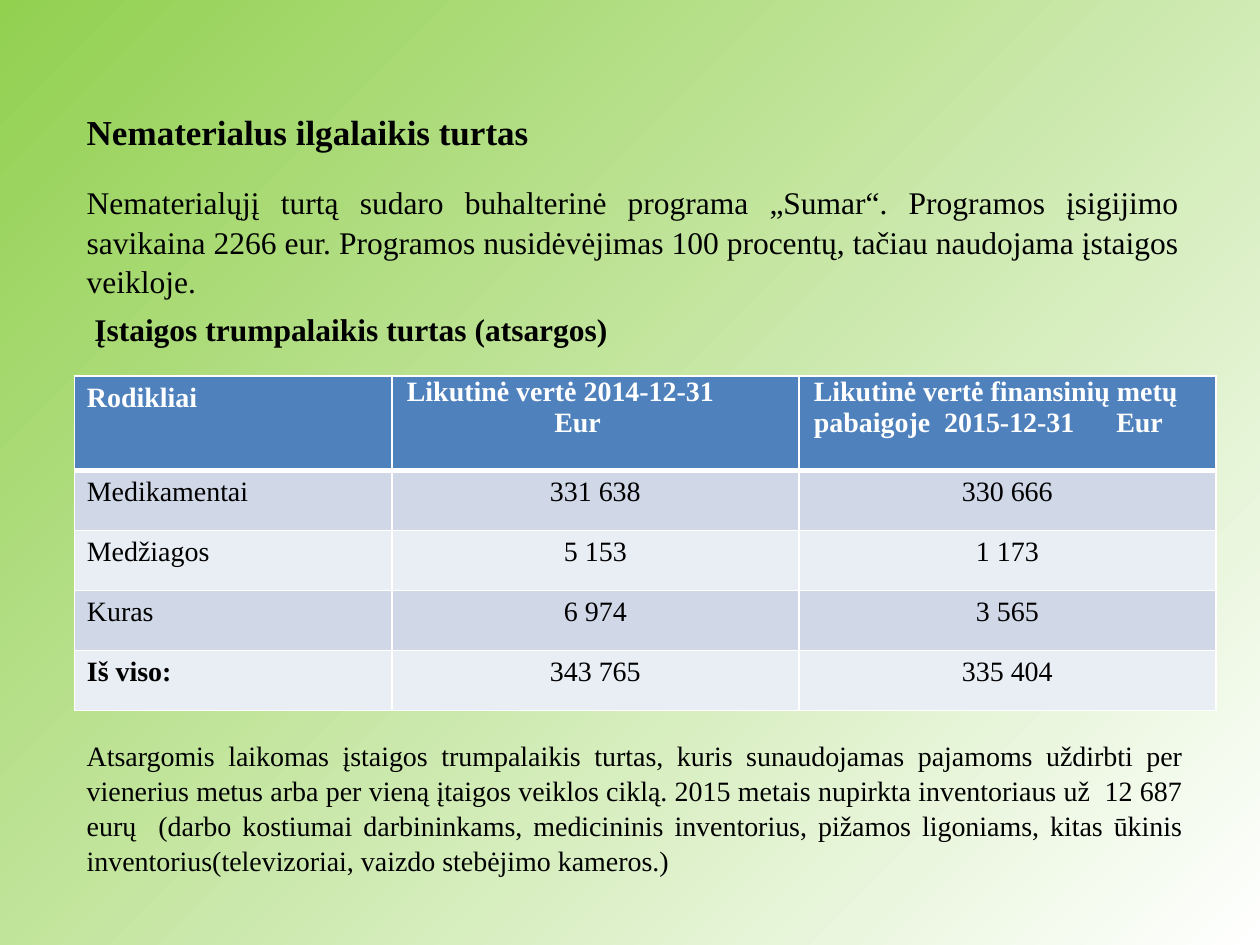
from lxml.etree import SubElement
from pptx import Presentation
from pptx.dml.color import RGBColor
from pptx.enum.text import PP_ALIGN
from pptx.oxml.ns import qn
from pptx.util import Inches, Pt

BLACK = RGBColor(0x00, 0x00, 0x00)
WHITE = RGBColor(0xFF, 0xFF, 0xFF)
GREEN = RGBColor(0x92, 0xD0, 0x50)
BLUE = RGBColor(0x4F, 0x81, 0xBD)
BANDS = [RGBColor(0xE9, 0xED, 0xF4), RGBColor(0xD0, 0xD8, 0xE8)]
FONT = "Times New Roman"
WIDTH, HEIGHT = Inches(10), Inches(7.5)
LEFT = 0.059

INTRO = ("Nematerialųjį turtą sudaro buhalterinė programa „Sumar“. Programos "
         "įsigijimo savikaina 2266 eur. Programos nusidėvėjimas 100 procentų, "
         "tačiau naudojama įstaigos veikloje.")
NOTE = ("Atsargomis laikomas įstaigos trumpalaikis turtas, kuris sunaudojamas "
        "pajamoms uždirbti per vienerius metus arba per vieną įtaigos veiklos "
        "ciklą. 2015 metais nupirkta inventoriaus už  12 687 eurų  (darbo "
        "kostiumai darbininkams, medicininis inventorius, pižamos ligoniams, "
        "kitas ūkinis inventorius(televizoriai, vaizdo stebėjimo kameros.)")
ROWS = [
    ["Rodikliai", "Likutinė vertė 2014-12-31\n\tEur",
     "Likutinė vertė finansinių metų pabaigoje  2015-12-31\tEur"],
    ["Medikamentai", "331 638", "330 666"],
    ["Medžiagos", "5 153", "1 173"],
    ["Kuras", "6 974", "3 565"],
    ["Iš viso:", "343 765", "335 404"],
]
TABS = [None, 1.17, 2.4]  # inches, where "Eur" starts in each header


class Page:
    """Holds the style and the current slide; lengths are shares of its size."""

    def __init__(self, deck):
        self.slide = deck.slides.add_slide(deck.slide_layouts[6])

    def backdrop(self, start, end, angle):
        fill = self.slide.background.fill
        fill.gradient()
        fill.gradient_angle = angle
        for stop, color in zip(fill.gradient_stops, (start, end)):
            stop.color.rgb = color

    def style(self, frame, size, color=BLACK, bold=False, align=PP_ALIGN.LEFT):
        for para in frame.paragraphs:
            para.alignment = align
            for run in para.runs:
                font = run.font
                font.name, font.size, font.bold = FONT, Pt(size), bold
                font.color.rgb = color

    def text(self, words, x, y, w, h, size, bold=False, align=PP_ALIGN.LEFT,
             space=1.0):
        box = self.slide.shapes.add_textbox(
            int(x * WIDTH), int(y * HEIGHT), int(w * WIDTH), int(h * HEIGHT))
        frame = box.text_frame
        frame.word_wrap = True
        frame.text = words
        frame.paragraphs[0].line_spacing = space
        self.style(frame, size, bold=bold, align=align)

    def tab(self, frame, inches):
        for para in frame.paragraphs:
            props = para._p.get_or_add_pPr()
            stops = SubElement(props, qn("a:tabLst"))
            SubElement(stops, qn("a:tab"), pos=str(Inches(inches)), algn="l")

    def border(self, cell, head):
        props = cell._tc.get_or_add_tcPr()
        for spot, side in enumerate(("lnL", "lnR", "lnT", "lnB")):
            width = 3 if head and side == "lnB" else 1
            line = props.makeelement(qn(f"a:{side}"), {"w": str(Pt(width))})
            fill = SubElement(line, qn("a:solidFill"))
            SubElement(fill, qn("a:srgbClr"), val=str(WHITE))
            props.insert(spot, line)

    def table(self, rows, x, y, widths, heights):
        grid = self.slide.shapes.add_table(
            len(rows), len(widths), int(x * WIDTH), int(y * HEIGHT),
            int(sum(widths) * WIDTH), int(sum(heights) * HEIGHT)).table
        for col, share in zip(grid.columns, widths):
            col.width = int(share * WIDTH)
        for row, share in zip(grid.rows, heights):
            row.height = int(share * HEIGHT)
        for r, row in enumerate(rows):
            for c, words in enumerate(row):
                self.cell(grid.cell(r, c), words, r, c, r == len(rows) - 1)

    def cell(self, cell, words, r, c, last):
        head = r == 0
        frame = cell.text_frame
        frame.text = words
        cell.fill.solid()
        cell.fill.fore_color.rgb = BLUE if head else BANDS[r % 2]
        center = c > 0 and not head
        self.style(frame, 16, WHITE if head else BLACK,
                   head or (last and c == 0),
                   PP_ALIGN.CENTER if center else PP_ALIGN.LEFT)
        if head and c:
            cell.margin_left = cell.margin_right = Inches(0.12)
            cell.margin_top = cell.margin_bottom = 0
            self.tab(frame, TABS[c])
        self.border(cell, head)


def main():
    deck = Presentation()
    deck.slide_width, deck.slide_height = WIDTH, HEIGHT
    page = Page(deck)
    page.backdrop(GREEN, WHITE, 315)

    # Headings and opening paragraph
    page.text("Nematerialus ilgalaikis turtas", LEFT, 0.11, 0.78, 0.05, 20, True)
    page.text(INTRO, LEFT, 0.185, 0.887, 0.13, 18,
              align=PP_ALIGN.JUSTIFY, space=1.05)
    page.text("Įstaigos trumpalaikis turtas (atsargos)",
              0.065, 0.322, 0.882, 0.05, 18, True)

    # Stock values by year
    page.table(ROWS, LEFT, 0.398, [0.252, 0.323, 0.331], [0.1] + [0.0635] * 4)

    # Closing paragraph
    page.text(NOTE, LEFT, 0.773, 0.89, 0.157, 16,
              align=PP_ALIGN.JUSTIFY, space=1.05)
    deck.save("out.pptx")


if __name__ == "__main__":
    main()
